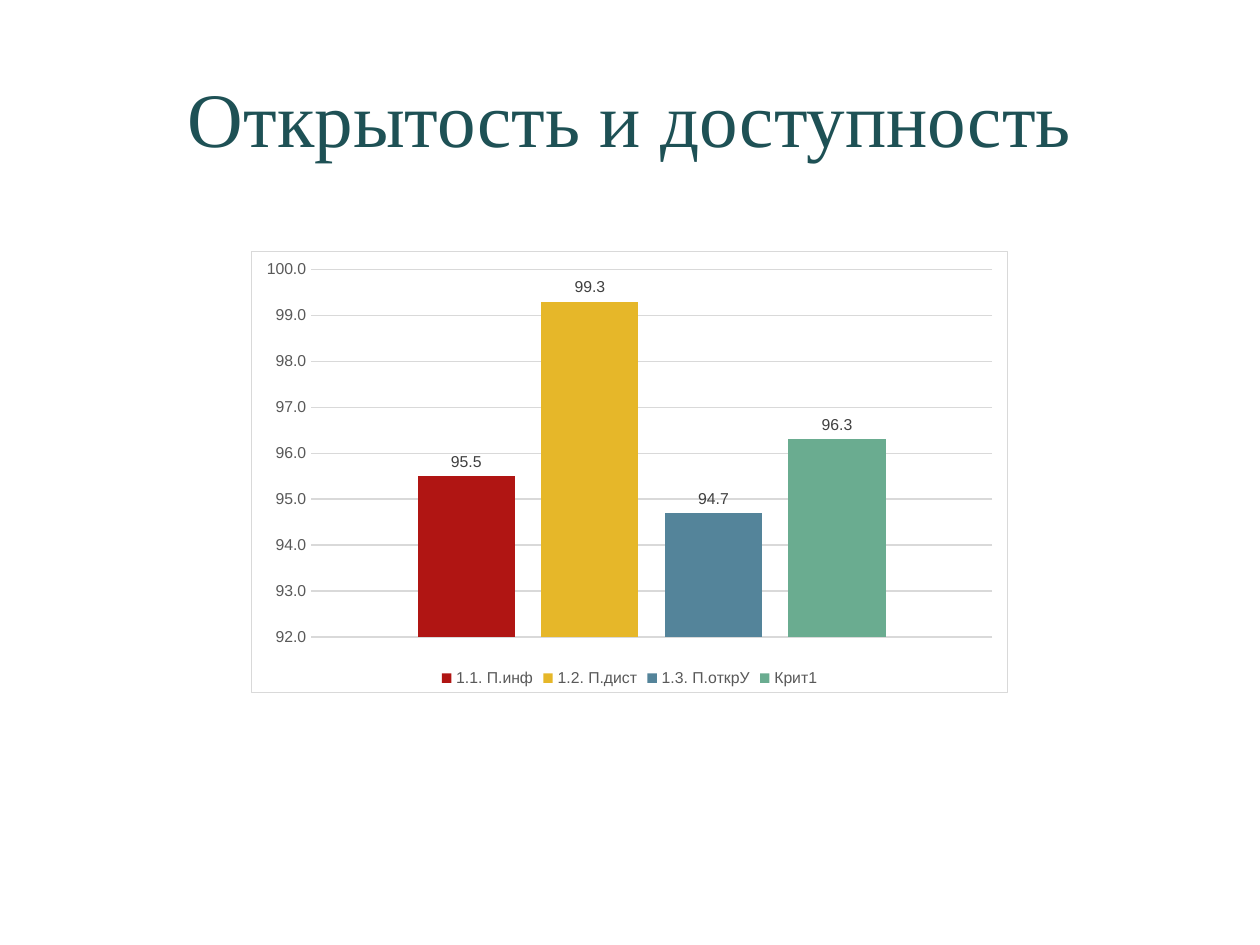
from lxml.etree import fromstring
from pptx import Presentation
from pptx.chart.data import CategoryChartData
from pptx.dml.color import RGBColor
from pptx.enum.chart import XL_CHART_TYPE as ChartType
from pptx.enum.chart import XL_LABEL_POSITION as LabelPosition
from pptx.enum.chart import XL_LEGEND_POSITION as LegendPosition
from pptx.enum.chart import XL_TICK_MARK as TickMark
from pptx.enum.text import MSO_ANCHOR as Anchor
from pptx.enum.text import PP_ALIGN as Align
from pptx.oxml.ns import qn
from pptx.util import Pt

TEAL = RGBColor(0x1E, 0x51, 0x55)
GREY = RGBColor(0x59, 0x59, 0x59)
DARK_GREY = RGBColor(0x40, 0x40, 0x40)
LIGHT_GREY = RGBColor(0xD9, 0xD9, 0xD9)
BLACK = RGBColor(0, 0, 0)
RED = RGBColor(0xB0, 0x15, 0x13)
YELLOW = RGBColor(0xE6, 0xB7, 0x29)
BLUE = RGBColor(0x54, 0x84, 0x9A)
GREEN = RGBColor(0x6A, 0xAC, 0x90)

HEADING = "Открытость и доступность"
CATEGORY = "1"
SCORES = [
    ("1.1. П.инф", 95.5, RED),
    ("1.2. П.дист", 99.3, YELLOW),
    ("1.3. П.открУ", 94.7, BLUE),
    ("Крит1", 96.3, GREEN),
]
SLIDE_SIZE = (1260, 945)
HEADING_BOX = (63, 38, 1134, 157)
CHART_BOX = (251, 251, 757, 442)
NUMBER_FORMAT = "0.0"
BORDER_XML = (
    '<c:spPr xmlns:c="http://schemas.openxmlformats.org/drawingml/2006/chart"'
    ' xmlns:a="http://schemas.openxmlformats.org/drawingml/2006/main">'
    '<a:solidFill><a:srgbClr val="FFFFFF"/></a:solidFill>'
    f'<a:ln w="{Pt(0.75)}"><a:solidFill><a:srgbClr val="{LIGHT_GREY}"/></a:solidFill></a:ln>'
    "</c:spPr>"
)


def px(*lengths):
    return [round(length * 914400 / 126) for length in lengths]


def style(font, size, color, face="Arial"):
    font.size = Pt(size)
    font.name = face
    font.color.rgb = color


def add_heading(slide):
    heading = slide.shapes.title
    heading.left, heading.top, heading.width, heading.height = px(*HEADING_BOX)
    frame = heading.text_frame
    frame.text = HEADING
    frame.vertical_anchor = Anchor.MIDDLE
    frame.paragraphs[0].alignment = Align.CENTER
    style(frame.paragraphs[0].runs[0].font, 44, TEAL, "Times New Roman")


def add_scores(slide):
    scores = CategoryChartData(number_format=NUMBER_FORMAT)
    scores.categories = [CATEGORY]
    for name, score, _ in SCORES:
        scores.add_series(name, [score])
    chart = slide.shapes.add_chart(
        ChartType.COLUMN_CLUSTERED, *px(*CHART_BOX), scores
    ).chart
    style(chart.font, 10, BLACK)
    chart.has_title = False
    chart.has_legend = True
    chart.legend.position = LegendPosition.BOTTOM
    chart.legend.include_in_layout = False
    style(chart.legend.font, 9, GREY)
    chart._chartSpace.find(qn("c:chart")).addnext(fromstring(BORDER_XML))

    chart.category_axis.visible = False
    axis = chart.value_axis
    axis.minimum_scale, axis.maximum_scale, axis.major_unit = 92, 100, 1
    axis.major_tick_mark = axis.minor_tick_mark = TickMark.NONE
    axis.format.line.fill.background()
    axis.major_gridlines.format.line.color.rgb = LIGHT_GREY
    axis.major_gridlines.format.line.width = Pt(0.75)
    axis.tick_labels.number_format = NUMBER_FORMAT
    axis.tick_labels.number_format_is_linked = False
    style(axis.tick_labels.font, 9, GREY)

    plot = chart.plots[0]
    plot.gap_width = 219
    plot.overlap = -27
    plot.vary_by_categories = False
    for series, (_, _, color) in zip(plot.series, SCORES):
        series.format.fill.solid()
        series.format.fill.fore_color.rgb = color
        series.invert_if_negative = False
        labels = series.data_labels
        labels.show_value = True
        labels.position = LabelPosition.OUTSIDE_END
        labels.number_format = NUMBER_FORMAT
        labels.number_format_is_linked = False
        style(labels.font, 9, DARK_GREY)


def main():
    deck = Presentation()
    deck.slide_width, deck.slide_height = px(*SLIDE_SIZE)
    slide = deck.slides.add_slide(deck.slide_layouts[5])
    add_heading(slide)
    add_scores(slide)
    deck.save("out.pptx")


if __name__ == "__main__":
    main()
